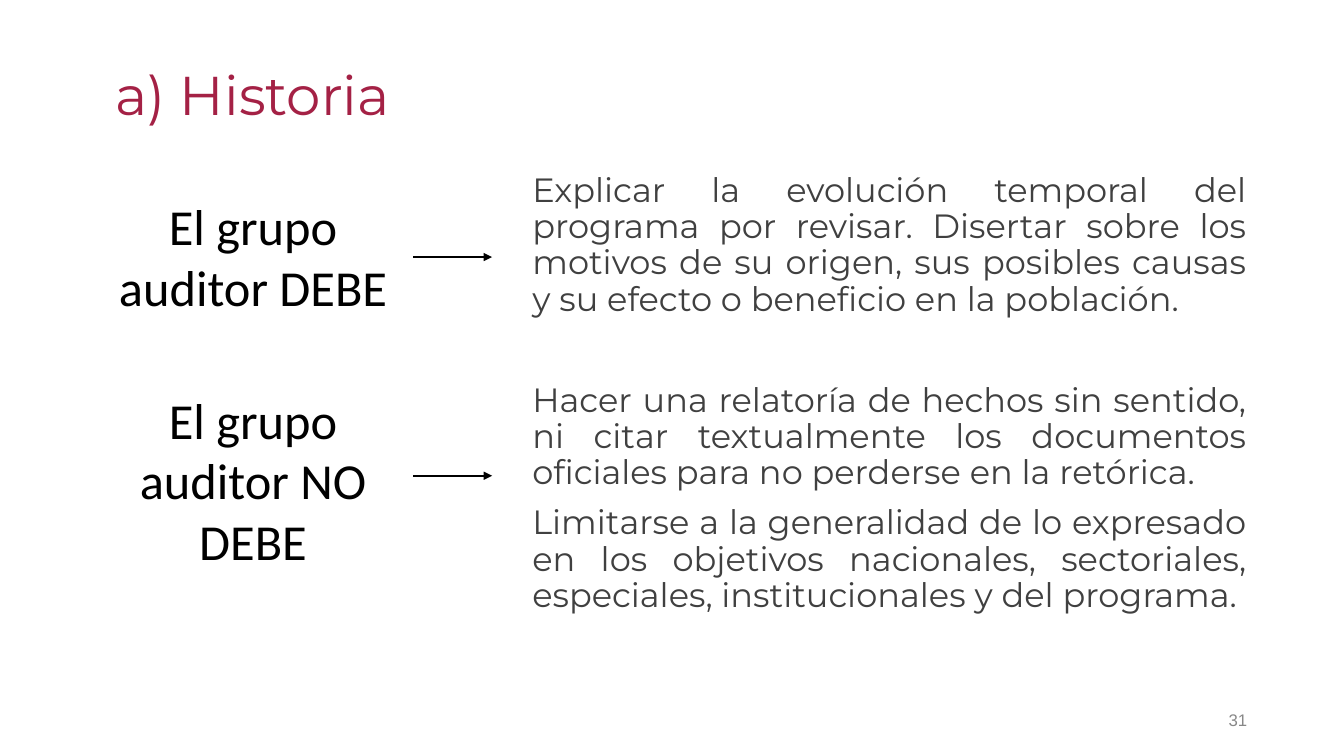
import pptx
import pptx.util
import pptx.dml.color
import pptx.enum.shapes
import pptx.enum.text
import pptx.oxml
import pptx.oxml.ns

Inches, Pt = pptx.util.Inches, pptx.util.Pt
ALIGN = pptx.enum.text.PP_ALIGN
ANCHOR = pptx.enum.text.MSO_ANCHOR

DEBE = [
    "Explicar la evolución temporal del programa por revisar. Disertar sobre los "
    "motivos de su origen, sus posibles causas y su efecto o beneficio en la población.",
]
NO_DEBE = [
    "Hacer una relatoría de hechos sin sentido, ni citar textualmente los documentos "
    "oficiales para no perderse en la retórica.",
    "Limitarse a la generalidad de lo expresado en los objetivos nacionales, "
    "sectoriales, especiales, institucionales y del programa.",
]


def color(hex_code):
    return pptx.dml.color.RGBColor.from_string(hex_code)


def write(sp, paragraphs, font, size, hex_code, align, spacing=1.0,
          margin=None, anchor=ANCHOR.TOP, wrap=True):
    tf = sp.text_frame
    tf.auto_size = pptx.enum.text.MSO_AUTO_SIZE.NONE
    tf.word_wrap = wrap
    tf.vertical_anchor = anchor
    if margin is not None:
        tf.margin_left = tf.margin_right = tf.margin_top = tf.margin_bottom = Inches(margin)
    tf.text = "\n".join(paragraphs)
    for i, p in enumerate(tf.paragraphs):
        p.alignment = align
        p.line_spacing = spacing
        p.space_before = Pt(10 if i else 0)
        for r in p.runs:
            r.font.name = font
            r.font.size = Pt(size)
            r.font.color.rgb = color(hex_code)


def add_text(s, box, paragraphs, *style, **options):
    sp = s.shapes.add_textbox(*map(Inches, box))
    write(sp, paragraphs, *style, **options)


def add_title(s, box, text):
    sp = s.shapes.title
    sp.left, sp.top, sp.width, sp.height = map(Inches, box)
    write(sp, [text], "Montserrat", 39, "A42145", ALIGN.CENTER, spacing=0.9, margin=0.05)


def add_arrow(s, x, y, length):
    line = s.shapes.add_connector(
        pptx.enum.shapes.MSO_CONNECTOR.STRAIGHT,
        Inches(x), Inches(y), Inches(x + length), Inches(y))
    line.line.color.rgb = color("000000")
    line.line.width = Pt(1.5)
    ln = line.line._get_or_add_ln()
    tail = pptx.oxml.parse_xml(
        '<a:tailEnd %s type="triangle"/>' % pptx.oxml.ns.nsdecls("a"))
    ln.append(tail)
    line._element.spPr.append(
        pptx.oxml.parse_xml("<a:effectLst %s/>" % pptx.oxml.ns.nsdecls("a")))


def add_rule(s, box, label, label_top, label_height, arrow_y, paragraphs):
    """Label on the left, arrow, and explanation on the right of the box."""
    left, top, width, height = box
    text_left = 4.29
    add_text(s, (left, top + label_top, 3.14, label_height), [label],
             "Calibri", 36, "000000", ALIGN.CENTER)
    add_arrow(s, left + 3.16, top + arrow_y, 0.78)
    add_text(s, (left + text_left, top, width - text_left, height), paragraphs,
             "Montserrat", 24, "404040", ALIGN.JUSTIFY, spacing=0.9, margin=0.05)


def main():
    prs = pptx.Presentation()
    prs.slide_width, prs.slide_height = Inches(13.33), Inches(7.5)
    s = prs.slides.add_slide(prs.slide_layouts[5])

    # Title
    add_title(s, (0.3, 0.63, 4.41, 1.38), "a) Historia")

    # What the audit group must and must not do
    add_rule(s, (0.94, 1.67, 11.47, 1.76), "El grupo auditor DEBE", 0.22, 1.31, 0.88, DEBE)
    add_rule(s, (0.94, 3.75, 11.47, 2.65), "El grupo auditor NO DEBE", 0.06, 1.92, 0.97, NO_DEBE)

    # Page number
    add_text(s, (12.13, 7, 0.29, 0.29), ["31"], "Arial", 12, "888888", ALIGN.RIGHT,
             margin=0.05, anchor=ANCHOR.MIDDLE, wrap=False)

    prs.save("out.pptx")


if __name__ == "__main__":
    main()
